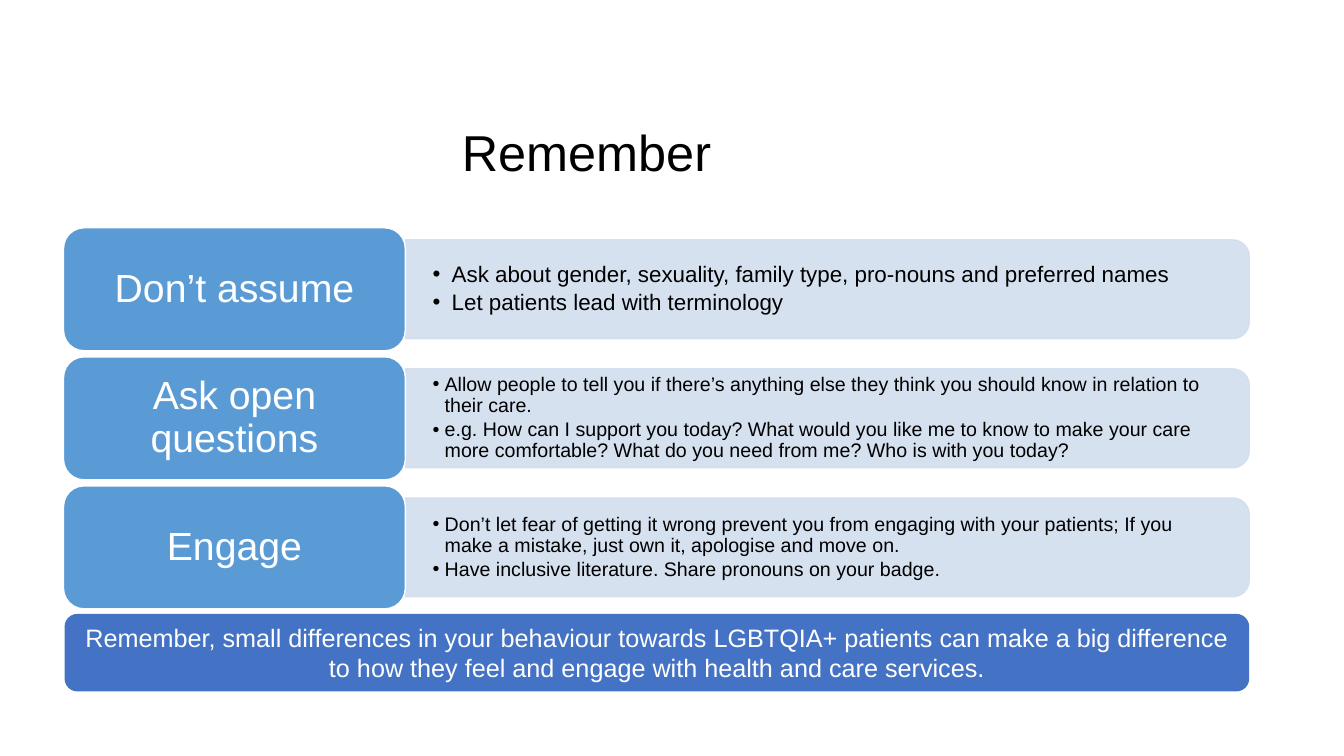
import dataclasses
import typing

import lxml.etree
import pptx
import pptx.dml.color
import pptx.enum.shapes
import pptx.enum.text
import pptx.oxml.ns
import pptx.util

Inches = pptx.util.Inches
Shape = pptx.enum.shapes.MSO_SHAPE
Align = pptx.enum.text.PP_ALIGN
Anchor = pptx.enum.text.MSO_ANCHOR
qn = pptx.oxml.ns.qn


@dataclasses.dataclass(frozen=True)
class Theme:
    font: str = "Arial"
    black: str = "000000"
    white: str = "FFFFFF"
    label: str = "5B9BD5"
    panel: str = "D2DEEF"
    banner: str = "4472C4"
    title_size: int = 36
    label_size: int = 28
    banner_size: int = 18


@dataclasses.dataclass(frozen=True)
class Box:
    left: float
    top: float
    width: float
    height: float

    def place(self, shape: typing.Any) -> None:
        shape.left, shape.top = Inches(self.left), Inches(self.top)
        shape.width, shape.height = Inches(self.width), Inches(self.height)


@dataclasses.dataclass(frozen=True)
class Row:
    label: str
    points: tuple[str, ...]
    size: int
    indent: float


THEME = Theme()
ROW_TOP, ROW_STEP = 2.26, 1.28
LABEL_LEFT, LABEL_WIDTH, LABEL_HEIGHT = 0.63, 3.39, 1.22
PANEL_LEFT, PANEL_WIDTH, PANEL_HEIGHT = 4.02, 8.37, 0.98
POINTS_WIDTH, POINTS_HEIGHT = 8.32, 0.88

ROWS = (
    Row("Don’t assume", (
        "Ask about gender, sexuality, family type, pro-nouns and preferred names",
        "Let patients lead with terminology",
    ), 16, 0.19),
    Row("Ask open questions", (
        "Allow people to tell you if there’s anything else they think you should "
        "know in relation to their care.",
        "e.g. How can I support you today? What would you like me to know to make "
        "your care more comfortable? What do you need from me? Who is with you today?",
    ), 14, 0.12),
    Row("Engage", (
        "Don’t let fear of getting it wrong prevent you from engaging with your "
        "patients; If you make a mistake, just own it, apologise and move on.",
        "Have inclusive literature. Share pronouns on your badge.",
    ), 14, 0.12),
)
BANNER = (
    "Remember, small differences in your behaviour towards LGBTQIA+ patients can "
    "make a big difference to how they feel and engage with health and care services."
)


def paint(color: typing.Any, value: str, alpha: int = 100) -> None:
    color.rgb = pptx.dml.color.RGBColor.from_string(value)


def fade(shape: typing.Any, percent: int) -> None:
    for color in shape._element.spPr.iter(qn("a:srgbClr")):
        lxml.etree.SubElement(color, qn("a:alpha"), val=str(percent * 1000))


def write(
    shape: typing.Any, *lines: str, size: int, color: str,
    align: Align = Align.CENTER, anchor: Anchor = Anchor.MIDDLE,
    inset: tuple[float, float] = (0.1, 0.05), spacing: float = 0.9,
    after: float = 0, indent: float = 0,
) -> None:
    frame = shape.text_frame
    frame.word_wrap = True
    frame.auto_size = pptx.enum.text.MSO_AUTO_SIZE.NONE
    frame.vertical_anchor = anchor
    frame.margin_left = frame.margin_right = Inches(inset[0])
    frame.margin_top = frame.margin_bottom = Inches(inset[1])
    frame.text = "\n".join(lines)
    for para in frame.paragraphs:
        para.alignment = align
        para.line_spacing = spacing
        para.space_after = pptx.util.Pt(after)
        if indent:
            props = para._p.get_or_add_pPr()
            props.set("marL", str(Inches(indent)))
            props.set("indent", str(-Inches(indent)))
            lxml.etree.SubElement(props, qn("a:buFont"), typeface=THEME.font)
            lxml.etree.SubElement(props, qn("a:buChar"), char="•")
        font = para.runs[0].font
        font.name = THEME.font
        font.size = pptx.util.Pt(size)
        paint(font.color, color)


def draw(
    slide: typing.Any, kind: Shape, box: Box, fill: str, line: str | None = None,
) -> typing.Any:
    shape = slide.shapes.add_shape(kind, 0, 0, 0, 0)
    box.place(shape)
    shape.shadow.inherit = False
    shape.fill.solid()
    paint(shape.fill.fore_color, fill)
    if line:
        paint(shape.line.color, line)
        shape.line.width = pptx.util.Pt(1)
    else:
        shape.line.fill.background()
    return shape


def add_row(slide: typing.Any, row: Row, top: float) -> None:
    middle = top + LABEL_HEIGHT / 2
    panel = draw(
        slide, Shape.ROUND_2_SAME_RECTANGLE,
        Box(PANEL_LEFT + (PANEL_WIDTH - PANEL_HEIGHT) / 2,
            middle - PANEL_WIDTH / 2, PANEL_HEIGHT, PANEL_WIDTH),
        THEME.panel, THEME.panel,
    )
    panel.rotation = 90
    fade(panel, 90)

    points = slide.shapes.add_textbox(0, 0, 0, 0)
    Box(PANEL_LEFT, middle - POINTS_HEIGHT / 2,
        POINTS_WIDTH, POINTS_HEIGHT).place(points)
    write(points, *row.points, size=row.size, color=THEME.black,
          align=Align.LEFT, inset=(0.27, 0.14),
          after=round(row.size * 0.15, 1), indent=row.indent)

    label = draw(slide, Shape.ROUNDED_RECTANGLE,
                 Box(LABEL_LEFT, top, LABEL_WIDTH, LABEL_HEIGHT),
                 THEME.label, THEME.white)
    write(label, row.label, size=THEME.label_size, color=THEME.white,
          inset=(0.18, 0.12))


def main() -> None:
    deck = pptx.Presentation()
    deck.slide_width, deck.slide_height = Inches(13.33), Inches(7.5)
    slide = deck.slides.add_slide(deck.slide_layouts[5])

    title = slide.shapes.title
    Box(4.48, 0.75, 12.05, 1.11).place(title)
    write(title, "Remember", size=THEME.title_size, color=THEME.black,
          align=Align.LEFT, anchor=Anchor.BOTTOM)

    for index, row in enumerate(ROWS):
        add_row(slide, row, ROW_TOP + index * ROW_STEP)

    banner = draw(slide, Shape.ROUNDED_RECTANGLE,
                  Box(0.64, 6.09, 11.75, 0.77), THEME.banner)
    write(banner, BANNER, size=THEME.banner_size, color=THEME.white, spacing=1.0)

    deck.save("out.pptx")


if __name__ == "__main__":
    main()
